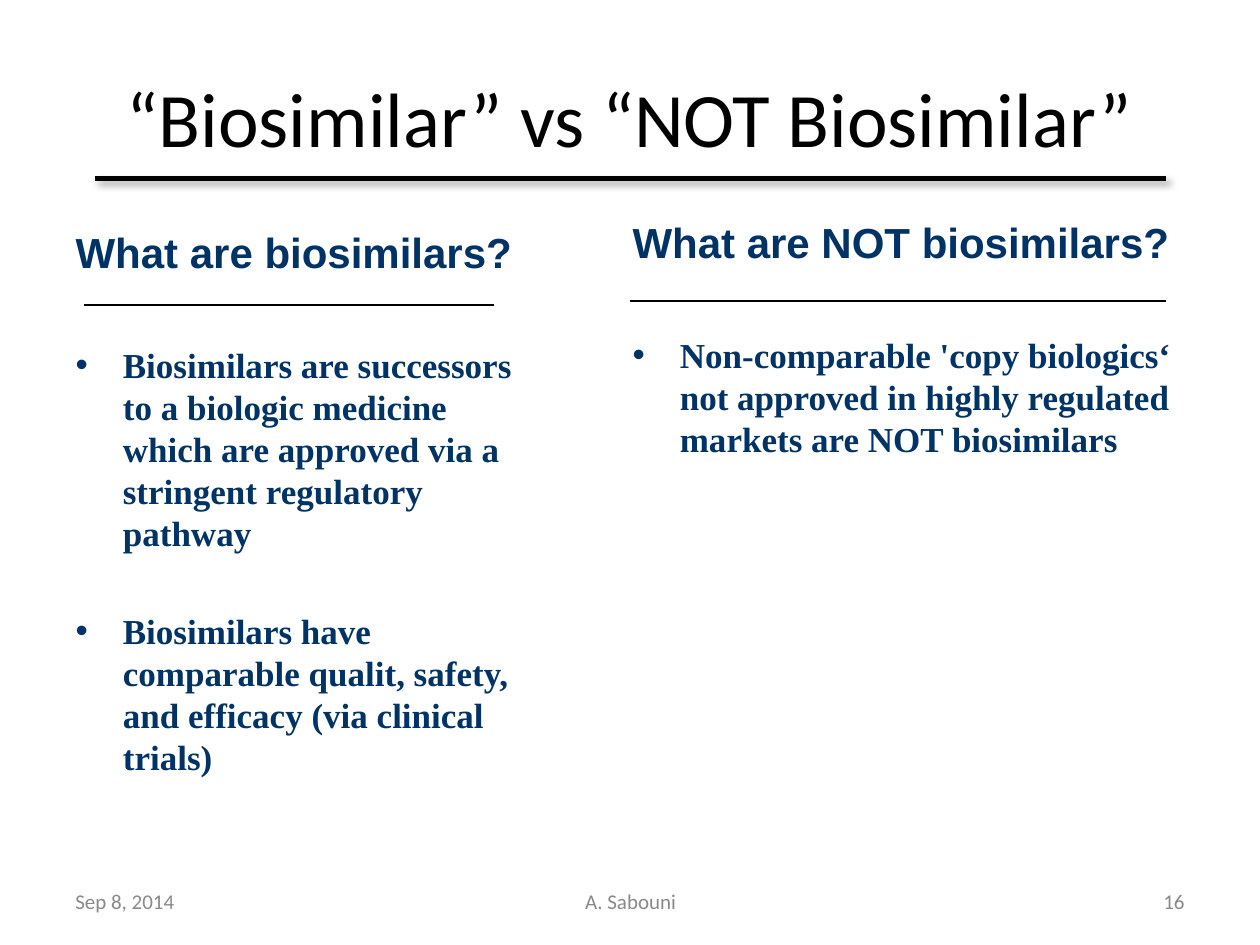
from dataclasses import dataclass

from lxml.etree import SubElement
from pptx import Presentation
from pptx.dml.color import RGBColor
from pptx.enum.shapes import MSO_CONNECTOR
from pptx.enum.text import MSO_ANCHOR, MSO_AUTO_SIZE, PP_ALIGN
from pptx.oxml.ns import qn
from pptx.util import Inches, Pt


@dataclass(frozen=True)
class Theme:
    black: RGBColor = RGBColor(0x00, 0x00, 0x00)
    navy: RGBColor = RGBColor(0x00, 0x33, 0x65)
    gray: RGBColor = RGBColor(0x89, 0x89, 0x89)
    title_font: str = "Calibri"
    heading_font: str = "Arial"
    list_font: str = "Times New Roman"
    title_size: int = 44
    heading_size: int = 24
    list_size: int = 20
    footer_size: int = 12


class SlideBuilder:
    def __init__(self, page, theme):
        self.page = page
        self.theme = theme

    def place(self, shape, left, top, width, height):
        shape.left, shape.top = Inches(left), Inches(top)
        shape.width, shape.height = Inches(width), Inches(height)

    def format(self, paragraph, font, size, color, bold=False):
        for span in paragraph.runs:
            span.font.name = font
            span.font.size = Pt(size)
            span.font.color.rgb = color
            span.font.bold = bold

    def title(self, text, *area):
        title = self.page.shapes.title
        self.place(title, *area)
        frame = title.text_frame
        frame.text = text
        frame.auto_size = MSO_AUTO_SIZE.NONE
        frame.vertical_anchor = MSO_ANCHOR.MIDDLE
        self.format(frame.paragraphs[0], self.theme.title_font,
                    self.theme.title_size, self.theme.black)

    def column(self, index, heading, points, *area):
        """Fill a body placeholder with an unbulleted heading and a bulleted list."""
        theme = self.theme
        body = self.page.placeholders[index]
        self.place(body, *area)
        frame = body.text_frame
        frame.text = "\n".join([heading, *points])
        frame.auto_size = MSO_AUTO_SIZE.NONE
        first, *items = frame.paragraphs

        first.space_before = Pt(2.4)
        properties = first._p.get_or_add_pPr()
        properties.set("marL", "0")
        properties.set("indent", "0")
        SubElement(properties, qn("a:buNone"))
        self.format(first, theme.heading_font, theme.heading_size, theme.navy, bold=True)

        for number, item in enumerate(items):
            item.space_before = Pt(32 if number else 38)
            self.format(item, theme.list_font, theme.list_size, theme.navy, bold=True)

    def rule(self, left, right, y, weight, shadow=False):
        line = self.page.shapes.add_connector(
            MSO_CONNECTOR.STRAIGHT, Inches(left), Inches(y), Inches(right), Inches(y))
        line.line.color.rgb = self.theme.black
        line.line.width = Pt(weight)
        effects = SubElement(line._element.spPr, qn("a:effectLst"))
        if shadow:
            outer = SubElement(effects, qn("a:outerShdw"), blurRad=str(Pt(4)),
                               dist=str(Pt(3)), dir=str(45 * 60000), rotWithShape="0")
            color = SubElement(outer, qn("a:srgbClr"), val=str(self.theme.black))
            SubElement(color, qn("a:alpha"), val="40000")

    def footer(self, text, left, width, alignment):
        box = self.page.shapes.add_textbox(
            Inches(left), Inches(6.95), Inches(width), Inches(0.4))
        frame = box.text_frame
        frame.word_wrap = True
        frame.vertical_anchor = MSO_ANCHOR.MIDDLE
        frame.text = text
        paragraph = frame.paragraphs[0]
        paragraph.alignment = alignment
        self.format(paragraph, self.theme.title_font,
                    self.theme.footer_size, self.theme.gray)


def main():
    deck = Presentation()
    deck.slide_width, deck.slide_height = Inches(10), Inches(7.5)
    two_content = deck.slide_layouts.get_by_name("Two Content")
    builder = SlideBuilder(deck.slides.add_slide(two_content), Theme())

    builder.title("“Biosimilar” vs “NOT Biosimilar”", 0.5, 0.3, 9, 1.25)
    builder.column(1, "What are biosimilars?", [
        "Biosimilars are successors to a biologic medicine which are approved "
        "via a stringent regulatory pathway",
        "Biosimilars have comparable qualit, safety, and efficacy (via clinical trials)",
    ], 0.5, 1.75, 3.75, 4.95)
    builder.column(2, "What are NOT biosimilars?", [
        "Non-comparable 'copy biologics‘ not approved in highly regulated "
        "markets are NOT biosimilars",
    ], 4.92, 1.67, 4.67, 4.95)

    builder.rule(0.75, 9.25, 1.42, 2.75, shadow=True)
    builder.rule(0.67, 3.92, 2.42, 1.25)
    builder.rule(5, 9.25, 2.39, 1.25)

    builder.footer("Sep 8, 2014", 0.5, 2.33, PP_ALIGN.LEFT)
    builder.footer("A. Sabouni", 3.42, 3.17, PP_ALIGN.CENTER)
    builder.footer("16", 7.17, 2.33, PP_ALIGN.RIGHT)

    deck.save("out.pptx")


if __name__ == "__main__":
    main()
